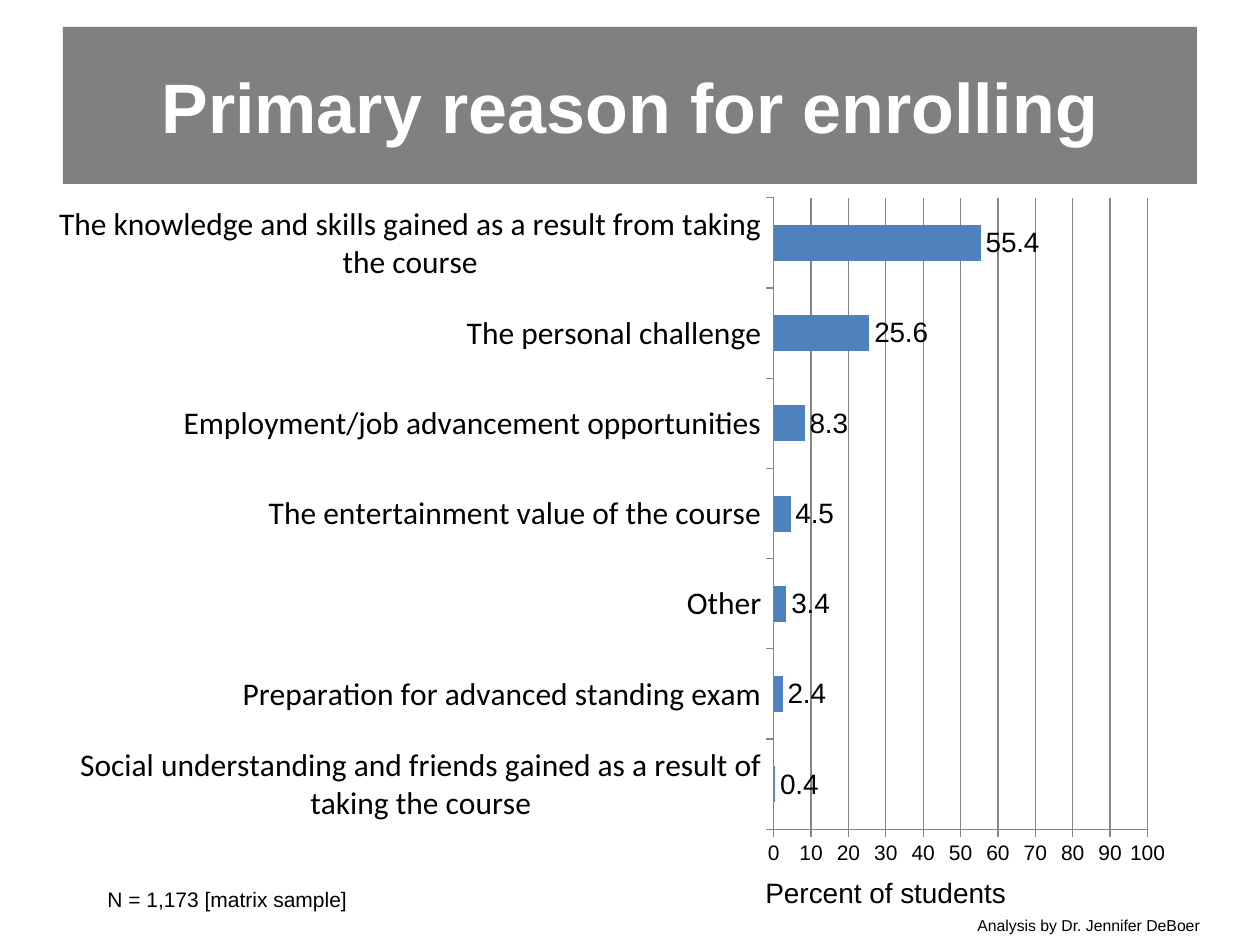
from lxml.etree import SubElement
from pptx import Presentation
from pptx.chart.data import CategoryChartData
from pptx.dml.color import RGBColor
from pptx.enum.chart import XL_CHART_TYPE, XL_LABEL_POSITION, XL_TICK_MARK
from pptx.enum.shapes import MSO_SHAPE
from pptx.enum.text import MSO_ANCHOR, PP_ALIGN
from pptx.oxml.ns import qn
from pptx.util import Emu, Pt


def px(length):
    return Emu(round(length * 914400 / 126))


def style(font, size, color="000000", name="Arial", bold=False):
    font.size = Pt(size)
    font.name = name
    font.bold = bold
    font.color.rgb = RGBColor.from_string(color)


deck = Presentation()
deck.slide_width, deck.slide_height = px(1260), px(945)
page = deck.slides.add_slide(deck.slide_layouts[6])

title = page.shapes.add_shape(MSO_SHAPE.RECTANGLE, px(63), px(27), px(1134), px(157))
title.shadow.inherit = False
title.fill.solid()
title.fill.fore_color.rgb = RGBColor.from_string("808080")
title.line.fill.background()
title.text_frame.vertical_anchor = MSO_ANCHOR.MIDDLE
para = title.text_frame.paragraphs[0]
para.text = "Primary reason for enrolling"
para.alignment = PP_ALIGN.CENTER
style(para.font, 40, "FFFFFF", bold=True)

reasons = [
    ("Social understanding and friends gained as a result of taking the course", 0.4),
    ("Preparation for advanced standing exam", 2.4),
    ("Other", 3.4),
    ("The entertainment value of the course", 4.5),
    ("Employment/job advancement opportunities", 8.3),
    ("The personal challenge", 25.6),
    ("The knowledge and skills gained as a result from taking the course", 55.4),
]
data = CategoryChartData(number_format="0.0")
data.categories = [reason for reason, percent in reasons]
data.add_series("Series 1", [percent for reason, percent in reasons])
chart = page.shapes.add_chart(
    XL_CHART_TYPE.BAR_CLUSTERED, px(59), px(184), px(1134), px(694), data
).chart
chart.has_legend = False
chart.has_title = False
style(chart.font, 10)

plot = chart.plots[0]
plot.gap_width = 150
plot.vary_by_categories = False
bars = plot.series[0]
bars.format.fill.solid()
bars.format.fill.fore_color.rgb = RGBColor.from_string("4F81BD")
plot.has_data_labels = True
labels = plot.data_labels
labels.show_value = True
labels.number_format = "0.0"
labels.number_format_is_linked = False
labels.position = XL_LABEL_POSITION.OUTSIDE_END
style(labels.font, 16)

reason_axis, percent_axis = chart.category_axis, chart.value_axis
style(reason_axis.tick_labels.font, 18, name="Calibri")
style(percent_axis.tick_labels.font, 12)
percent_axis.minimum_scale = 0
percent_axis.maximum_scale = 100
percent_axis.major_unit = 10
percent_axis.has_major_gridlines = True
percent_axis.tick_labels.number_format = "0"
percent_axis.tick_labels.number_format_is_linked = False
for axis in (reason_axis, percent_axis):
    axis.major_tick_mark = XL_TICK_MARK.OUTSIDE
for item in (reason_axis, percent_axis, percent_axis.major_gridlines):
    item.format.line.color.rgb = RGBColor.from_string("868686")
    item.format.line.width = Pt(0.75)

area = chart._chartSpace.chart.plotArea
for layout in area.findall(qn("c:layout")):
    area.remove(layout)
layout = SubElement(area, qn("c:layout"))
area.insert(0, layout)
manual = SubElement(layout, qn("c:manualLayout"))
for tag, value in [
    ("layoutTarget", "inner"), ("xMode", "edge"), ("yMode", "edge"),
    ("x", "0.63"), ("y", "0.02"), ("w", "0.33"), ("h", "0.91"),
]:
    SubElement(manual, qn(f"c:{tag}")).set("val", value)

for text, left, top, width, height, size in [
    ("Percent of students", 753, 869, 391, 47, 16),
    ("N = 1,173 [matrix sample]", 95, 880, 469, 38, 12),
    ("Analysis by Dr. Jennifer DeBoer", 965, 910, 295, 32, 9),
]:
    box = page.shapes.add_textbox(px(left), px(top), px(width), px(height))
    box.text_frame.word_wrap = True
    para = box.text_frame.paragraphs[0]
    para.text = text
    style(para.font, size)

deck.save("out.pptx")
